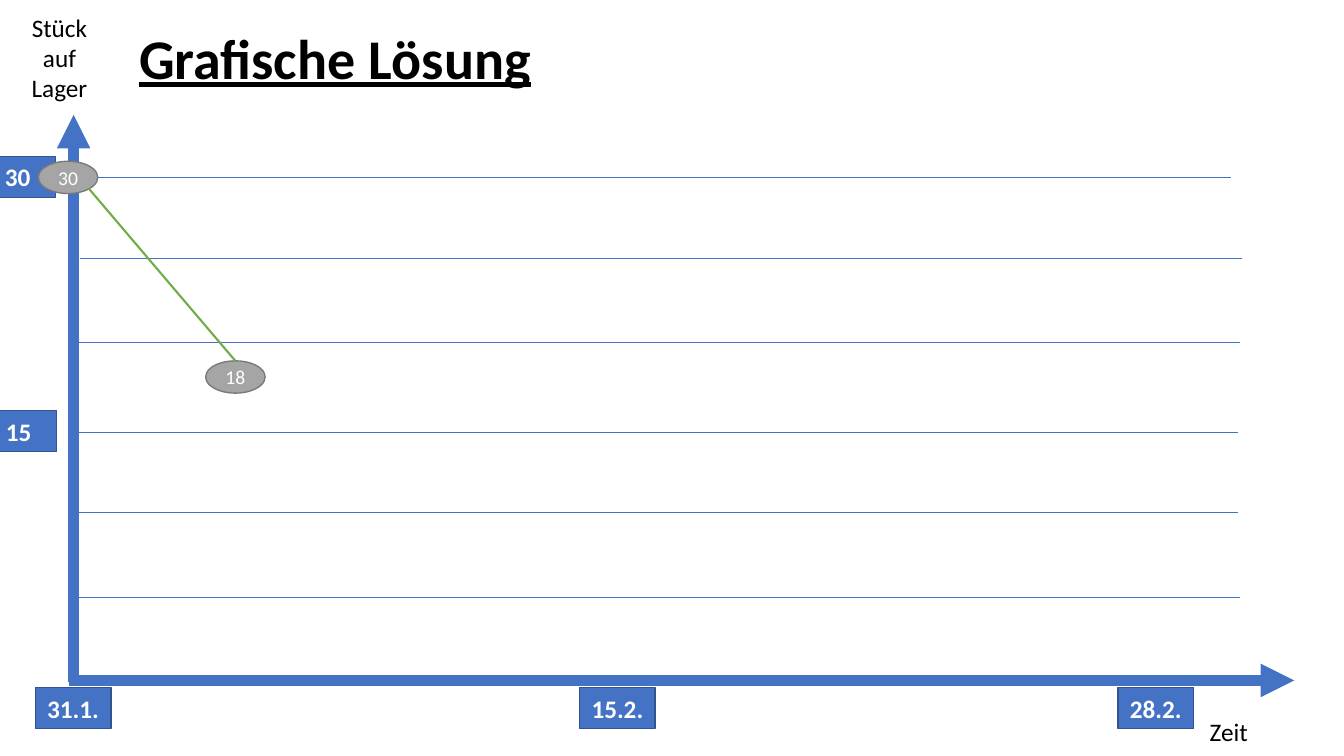
from collections import namedtuple

from lxml import etree
from pptx import Presentation
from pptx.dml.color import RGBColor
from pptx.enum.shapes import MSO_CONNECTOR, MSO_SHAPE
from pptx.enum.text import MSO_ANCHOR, PP_ALIGN
from pptx.oxml.ns import qn
from pptx.util import Inches, Pt

STRAIGHT = MSO_CONNECTOR.STRAIGHT
RECTANGLE, OVAL = MSO_SHAPE.RECTANGLE, MSO_SHAPE.OVAL
TOP, MIDDLE = MSO_ANCHOR.TOP, MSO_ANCHOR.MIDDLE
LEFT, CENTER = PP_ALIGN.LEFT, PP_ALIGN.CENTER

CELL = Inches(0.1)
COLUMNS, ROWS = 133.33, 75
FONT = "Calibri"
COLORS = {
    "axis": "4472C4",
    "label_border": "325491",
    "point": "A5A5A5",
    "point_border": "7A7A7A",
    "stock": "70AD47",
    "light": "FFFFFF",
    "dark": "000000",
}

Box = namedtuple("Box", "left top width height")


def cells(*counts):
    """Convert grid cells to slide lengths."""
    return [round(count * CELL) for count in counts]


def color(name):
    """Look up a named colour."""
    return RGBColor.from_string(COLORS[name])


def write_text(shape, text, size=18, ink="dark", bold=False, underline=False,
               align=CENTER, anchor=TOP):
    """Write formatted text into a shape."""
    frame = shape.text_frame
    frame.word_wrap = True
    frame.vertical_anchor = anchor
    paragraph = frame.paragraphs[0]
    paragraph.alignment = align
    run = paragraph.add_run()
    run.text = text
    font = run.font
    font.name, font.size = FONT, Pt(size)
    font.bold, font.underline = bold, underline
    font.color.rgb = color(ink)


def add_line(slide, start, end, ink="axis", width=0.5, arrow=False):
    """Add a straight line, optionally ending in an arrowhead."""
    line = slide.shapes.add_connector(STRAIGHT, *cells(*start, *end))
    line.line.color.rgb = color(ink)
    line.line.width = Pt(width)
    if arrow:
        outline = line.line._get_or_add_ln()
        etree.SubElement(outline, qn("a:tailEnd"), type="triangle")
    etree.SubElement(line._element.spPr, qn("a:effectLst"))
    return line


def add_badge(slide, kind, box, text, fill, border, **text_format):
    """Add a filled shape with centred light text."""
    badge = slide.shapes.add_shape(kind, *cells(*box))
    badge.shadow.inherit = False
    badge.fill.solid()
    badge.fill.fore_color.rgb = color(fill)
    badge.line.color.rgb = color(border)
    badge.line.width = Pt(1)
    write_text(badge, text, ink="light", anchor=MIDDLE, **text_format)
    return badge


def draw_title(slide, box):
    """Place the slide title in its box."""
    title = slide.shapes.title
    title.left, title.top, title.width, title.height = cells(*box)
    write_text(title, "Grafische Lösung", size=40, bold=True, underline=True, align=LEFT)


def draw_gridlines(slide, box):
    """Draw the horizontal lines of the chart area."""
    starts = [(-0.5, 6.2), (0.6, 14.2), (0.4, 22.6), (0.2, 31.5), (0.2, 39.4), (0.4, 47.9)]
    length = box.width - 5.8
    for column, row in starts:
        left, height = box.left + column, box.top + row
        add_line(slide, (left, height), (left + length, height))


def draw_axes(slide, box):
    """Draw both axes with their arrows and captions."""
    bottom = box.top + box.height
    add_line(slide, (box.left - 0.5, bottom), (box.left + box.width, bottom), width=8, arrow=True)
    add_line(slide, (box.left, bottom + 0.2), (box.left, box.top), width=8, arrow=True)
    captions = [
        ("Stück auf Lager", Box(box.left - 6.4, box.top - 10.7, 10, 10.1)),
        ("Zeit", Box(box.left + 105.6, bottom + 3.1, 18, 4)),
    ]
    for text, place in captions:
        write_text(slide.shapes.add_textbox(*cells(*place)), text)


def draw_axis_labels(slide, box):
    """Place date labels below the chart and stock labels beside it."""
    below = box.height + 0.7
    labels = [
        ("31.1.", -3.8, below),
        ("15.2.", 50.2, below),
        ("28.2.", 103.6, below),
        ("15", -9.2, 29.3),
        ("30", -9.3, 4.1),
    ]
    for text, column, row in labels:
        place = Box(box.left + column, box.top + row, 7.5, 4.1)
        add_badge(slide, RECTANGLE, place, text, "axis", "label_border", bold=True)


def draw_stock_curve(slide, box):
    """Draw the stock points and the line joining them."""
    points = [("30", -3.5, 4.6), ("18", 13.1, 24.4)]
    first, last = [
        add_badge(slide, OVAL, Box(box.left + column, box.top + row, 5.9, 3.2),
                  text, "point", "point_border", size=14)
        for text, column, row in points
    ]
    start = box.left + 1.5, box.top + 7.3
    end = last.left / CELL + 2.95, last.top / CELL
    add_line(slide, start, end, ink="stock", width=1.5).end_connect(last, 0)


def main():
    """Build and save the presentation."""
    presentation = Presentation()
    presentation.slide_width, presentation.slide_height = cells(COLUMNS, ROWS)
    slide = presentation.slides.add_slide(presentation.slide_layouts[5])
    chart = Box(7.3, 11.4, 121.1, 56.1)
    draw_gridlines(slide, chart)
    draw_axes(slide, chart)
    draw_axis_labels(slide, chart)
    draw_title(slide, Box(12.8, 1.8, 67.7, 7.7))
    draw_stock_curve(slide, chart)
    presentation.save("out.pptx")


if __name__ == "__main__":
    main()
